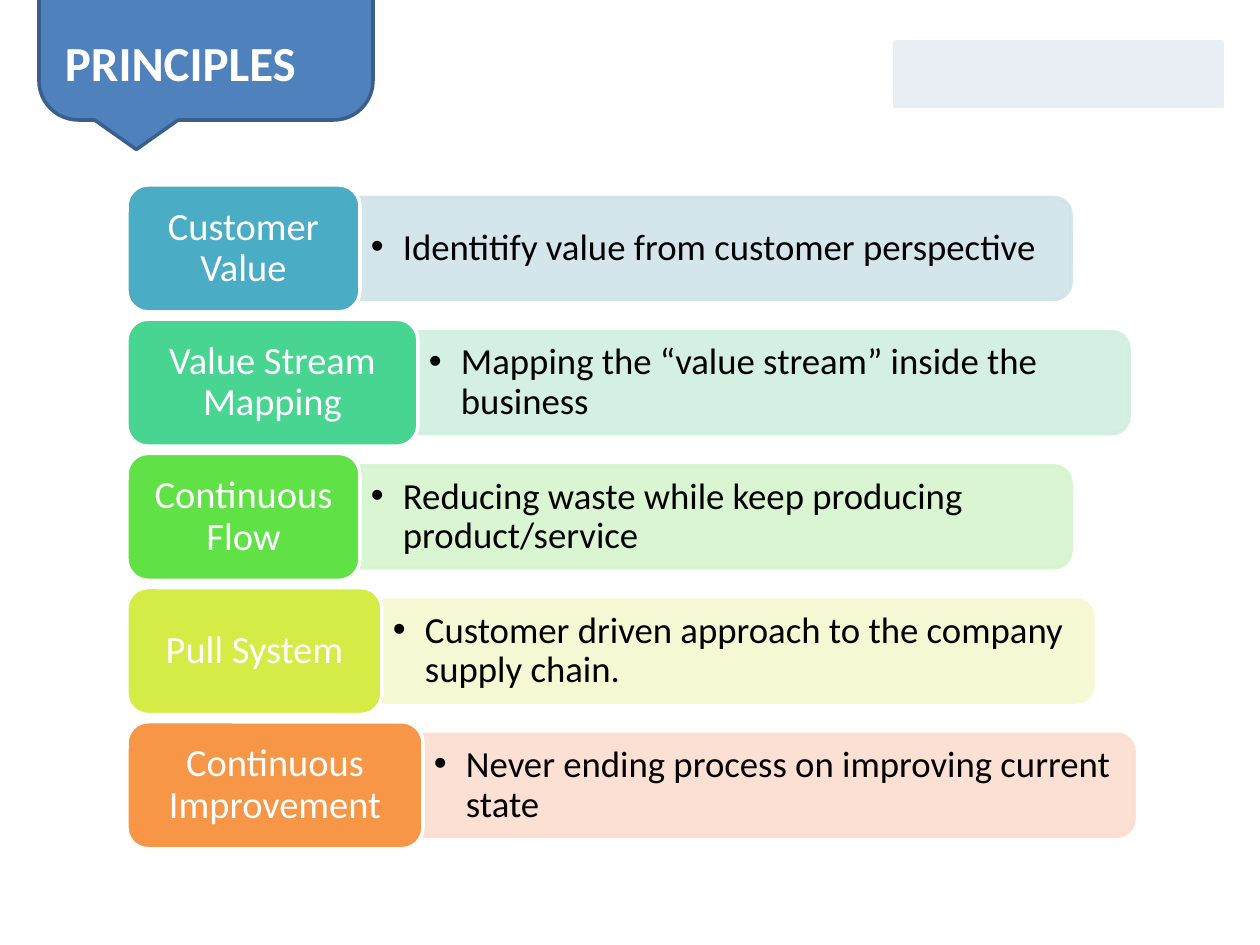
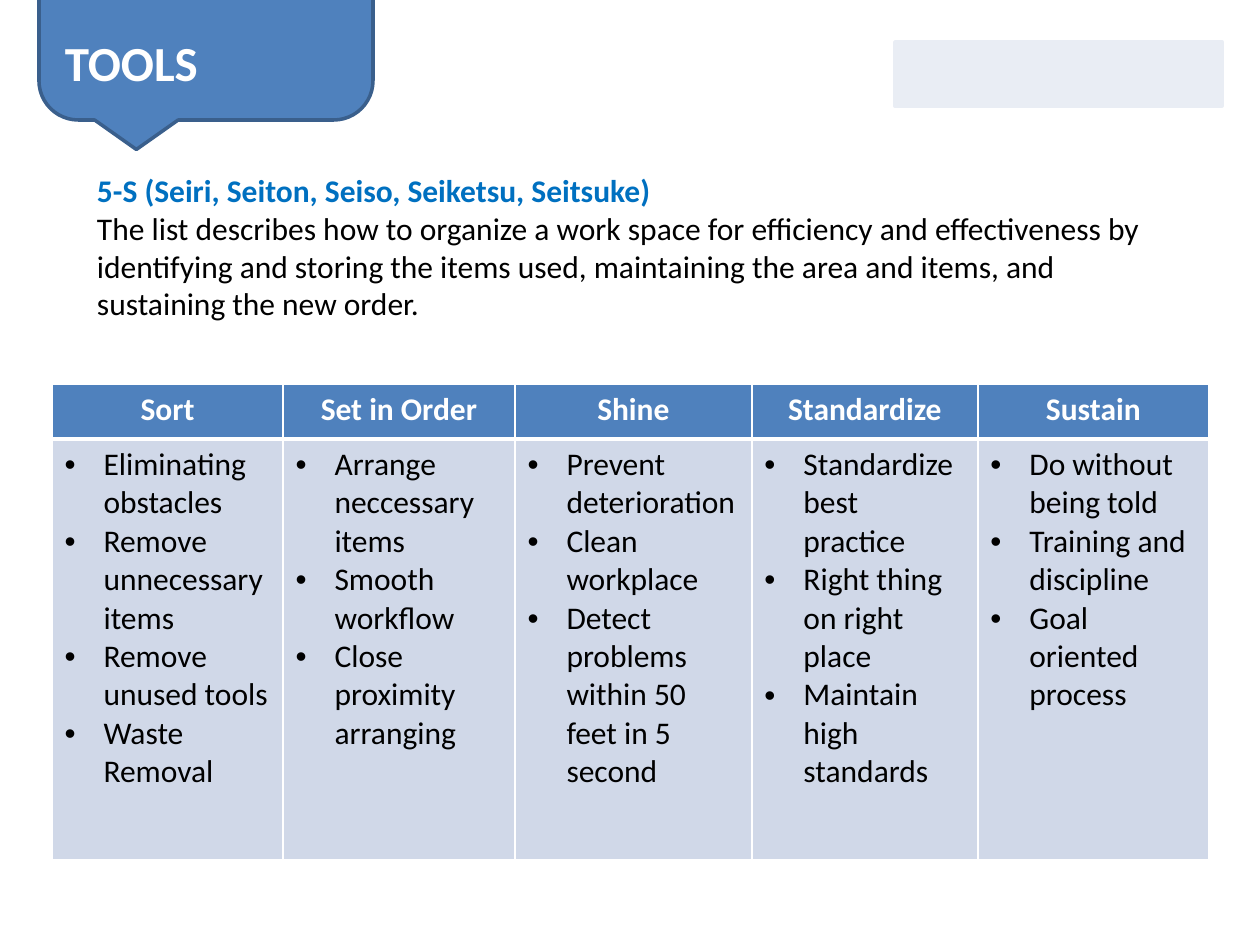
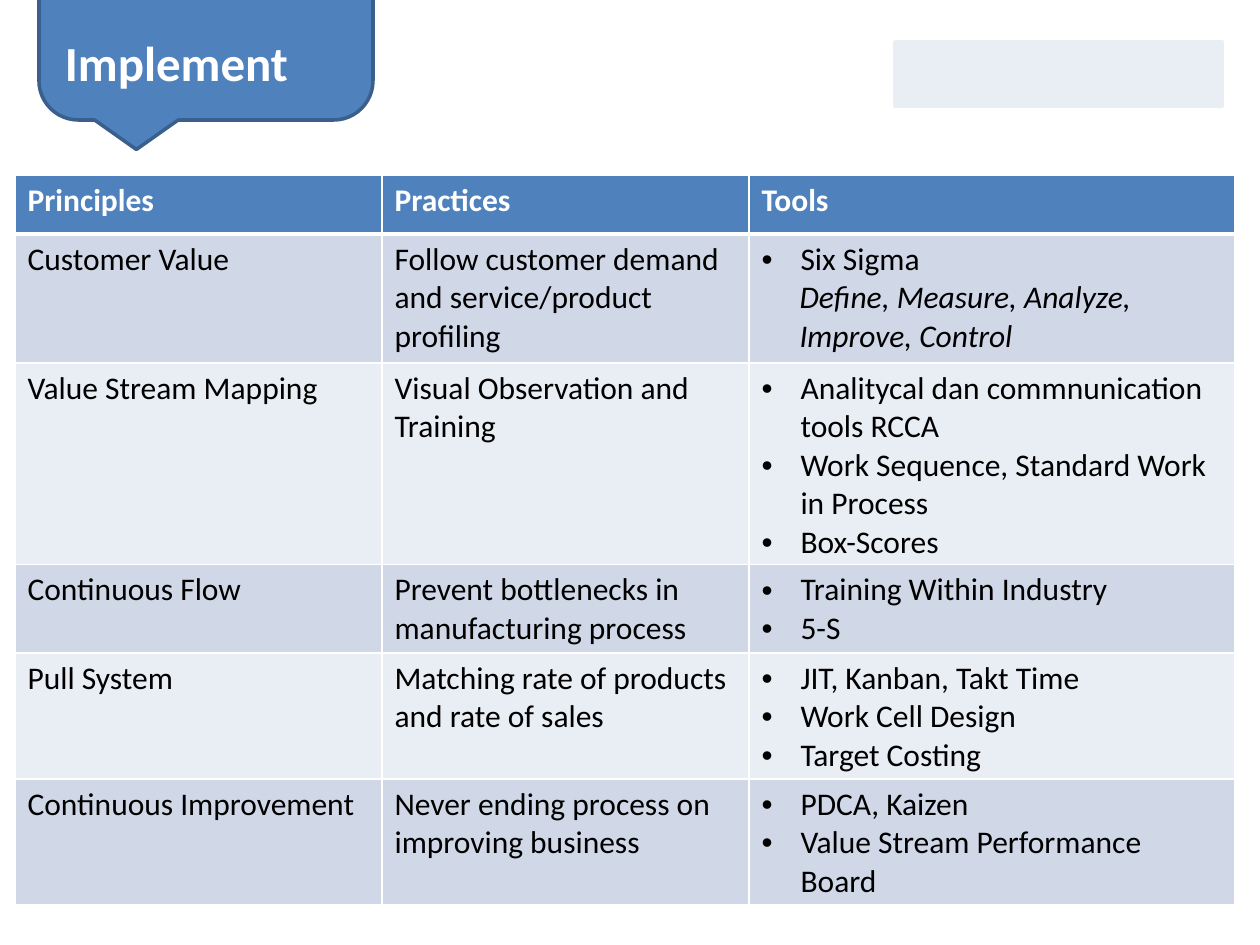
from dataclasses import dataclass

from lxml import etree
from pptx import Presentation
from pptx import util as u
from pptx.dml.color import RGBColor
from pptx.enum import shapes, text
from pptx.oxml.ns import qn

PIXELS_PER_INCH = 126


@dataclass(frozen=True)
class Theme:
    font: str = "Calibri"
    white: str = "FFFFFF"
    black: str = "000000"
    band: str = "4F81BD"
    band_edge: str = "3A5F8C"
    accent: str = "0070C0"
    row_dark: str = "D0D8E8"
    row_light: str = "E9EDF4"
    title_size: int = 28
    label_size: int = 22
    principle_size: int = 21
    body_size: int = 18


THEME = Theme()

# label, description, label width, label colour, bar colour
PRINCIPLES = [
    ("Customer Value", "Identitify value from customer perspective", 233, "4BACC6", "D0E3EA"),
    ("Value Stream Mapping", "Mapping the “value stream” inside the business", 291, "48D491", "CFEFE1"),
    ("Continuous Flow", "Reducing waste while keep producing product/service", 233, "60E146", "D6F4CE"),
    ("Pull System", "Customer driven approach to the company supply chain.", 255, "D5EC46", "F6F8CF"),
    ("Continuous Improvement", "Never ending process on improving current state", 296, "F79646", "FCDDCF"),
]

FIVE_S_HEADING = "5-S (Seiri, Seiton, Seiso, Seiketsu, Seitsuke)"
FIVE_S_SUMMARY = (
    "The list describes how to organize a work space for efficiency and effectiveness by "
    "identifying and storing the items used, maintaining the area and items, and "
    "sustaining the new order."
)
FIVE_S_TABLE = [
    ["Sort", "Set in Order", "Shine", "Standardize", "Sustain"],
    [
        ["Eliminating obstacles", "Remove unnecessary items", "Remove unused tools", "Waste Removal"],
        ["Arrange neccessary items", "Smooth workflow", "Close proximity arranging"],
        ["Prevent deterioration", "Clean workplace", "Detect problems within 50 feet in 5 second"],
        ["Standardize best practice", "Right thing on right place", "Maintain high standards"],
        ["Do without being told", "Training and discipline", "Goal oriented process"],
    ],
]

STEPS_NOTE = {"bullet": False, "indent": 38, "italic": True}
IMPLEMENT_TABLE = [
    ["Principles", "Practices", "Tools"],
    [
        "Customer Value",
        "Follow customer demand and service/product profiling",
        ["Six Sigma", ("Define, Measure, Analyze, Improve, Control", STEPS_NOTE)],
    ],
    [
        "Value Stream Mapping",
        "Visual Observation and Training",
        [
            "Analitycal dan commnunication tools RCCA",
            "Work Sequence, Standard Work in Process",
            "Box-Scores",
        ],
    ],
    [
        "Continuous Flow",
        "Prevent bottlenecks in manufacturing process",
        ["Training Within Industry", "5-S"],
    ],
    [
        "Pull System",
        "Matching rate of products and rate of sales",
        ["JIT, Kanban, Takt Time", "Work Cell Design", "Target Costing"],
    ],
    [
        "Continuous Improvement",
        "Never ending process on improving business",
        ["PDCA, Kaizen", "Value Stream Performance Board"],
    ],
]


def px(length):
    return u.Emu(round(length * 914400 / PIXELS_PER_INCH))


def write(frame, words, size=THEME.body_size, color=THEME.black, bold=False, italic=False,
          align=text.PP_ALIGN.LEFT, bullet=False, indent=0, spacing=None):
    """Add one paragraph, filling the frame's empty first paragraph if there is one."""
    paragraph = frame.paragraphs[0]
    if paragraph.runs:
        paragraph = frame.add_paragraph()
    paragraph.alignment = align
    if spacing:
        paragraph.line_spacing = spacing
    properties = paragraph._p.get_or_add_pPr()
    properties.set("marL", str(px(indent)))
    properties.set("indent", str(px(-indent if bullet else 0)))
    if bullet:
        etree.SubElement(properties, qn("a:buFont"), typeface="Arial")
        etree.SubElement(properties, qn("a:buChar"), char="•")

    run = paragraph.add_run()
    run.text = words
    run.font.name = THEME.font
    run.font.size = u.Pt(size)
    run.font.bold = bold
    run.font.italic = italic
    run.font.color.rgb = RGBColor.from_string(color)


def set_frame(frame, horizontal=13, vertical=6, anchor=text.MSO_ANCHOR.TOP):
    frame.word_wrap = True
    frame.vertical_anchor = anchor
    frame.margin_left = frame.margin_right = px(horizontal)
    frame.margin_top = frame.margin_bottom = px(vertical)
    return frame


def add_text_box(slide, box, **frame_format):
    text_box = slide.shapes.add_textbox(*map(px, box))
    return set_frame(text_box.text_frame, **frame_format)


def add_filled_shape(slide, kind, box, fill, line, opacity=100):
    shape = slide.shapes.add_shape(kind, *map(px, box))
    shape.shadow.inherit = False
    shape.fill.solid()
    shape.fill.fore_color.rgb = RGBColor.from_string(fill)
    shape.line.color.rgb = RGBColor.from_string(line)
    shape.line.width = u.Pt(2)
    if opacity < 100:
        for color in shape._element.spPr.iter(qn("a:srgbClr")):
            etree.SubElement(color, qn("a:alpha"), val=str(opacity * 1000))
    return shape


def add_slide(presentation, title):
    """Add a blank slide with the title callout and a plain corner block."""
    slide = presentation.slides.add_slide(presentation.slide_layouts[6])
    add_filled_shape(slide, shapes.MSO_SHAPE.ROUNDED_RECTANGULAR_CALLOUT,
                     (39, -116, 334, 236), THEME.band, THEME.band_edge)
    add_filled_shape(slide, shapes.MSO_SHAPE.RECTANGLE,
                     (895, 42, 327, 64), THEME.row_light, THEME.row_light)
    write(add_text_box(slide, (52, 26, 307, 72)), title,
          size=THEME.title_size, color=THEME.white, bold=True)
    return slide


def add_principles(slide):
    left, top, pitch, label_height = 127, 185, 134.2, 127
    bar_width, bar_height = 711, 102
    middle = text.MSO_ANCHOR.MIDDLE
    for index, (label, description, label_width, label_color, bar_color) in enumerate(PRINCIPLES):
        row_top = top + index * pitch
        center = row_top + label_height / 2
        bar_left = left + label_width

        # The bar stands upright before its quarter turn about the centre.
        bar = add_filled_shape(
            slide, shapes.MSO_SHAPE.ROUND_2_SAME_RECTANGLE,
            (bar_left + (bar_width - bar_height) / 2, center - bar_width / 2, bar_height, bar_width),
            bar_color, bar_color, opacity=90)
        bar.rotation = 90
        frame = add_text_box(slide, (bar_left, center - 46, bar_width - 5, 92),
                             horizontal=11, vertical=5, anchor=middle)
        write(frame, description, size=THEME.principle_size, bullet=True, indent=32, spacing=0.9)

        block = add_filled_shape(slide, shapes.MSO_SHAPE.ROUNDED_RECTANGLE,
                                 (left, row_top, label_width, label_height), label_color, THEME.white)
        write(set_frame(block.text_frame, horizontal=11, anchor=middle), label,
              size=THEME.label_size, color=THEME.white, align=text.PP_ALIGN.CENTER, spacing=0.9)


def style_cell(cell, fill, **border_points):
    """Set white borders, one point unless given by side (T or B), then the fill."""
    properties = cell._tc.get_or_add_tcPr()
    for side in "LRTB":
        width = u.Pt(border_points.get(side, 1))
        line = etree.SubElement(properties, qn("a:ln" + side), w=str(width))
        solid = etree.SubElement(line, qn("a:solidFill"))
        etree.SubElement(solid, qn("a:srgbClr"), val=THEME.white)
    cell.fill.solid()
    cell.fill.fore_color.rgb = RGBColor.from_string(fill)


def add_table(slide, rows, corner, widths, heights, header_align=text.PP_ALIGN.LEFT):
    box = (*corner, sum(widths), sum(heights))
    table = slide.shapes.add_table(len(rows), len(widths), *map(px, box)).table
    table.horz_banding = False
    for column, width in zip(table.columns, widths):
        column.width = px(width)
    for row, height in zip(table.rows, heights):
        row.height = px(height)

    for row_index, row in enumerate(rows):
        for column_index, content in enumerate(row):
            cell = table.cell(row_index, column_index)
            frame = cell.text_frame
            if row_index == 0:
                style_cell(cell, THEME.band, B=3)
                write(frame, content, color=THEME.white, bold=True, align=header_align)
                continue
            style_cell(cell, THEME.row_dark if row_index % 2 else THEME.row_light,
                       T=3 if row_index == 1 else 1)
            if isinstance(content, str):
                write(frame, content)
                continue
            for item in content:
                words, overrides = (item, {}) if isinstance(item, str) else item
                write(frame, words, **{"bullet": True, "indent": 39, **overrides})


def main():
    presentation = Presentation()
    presentation.slide_width, presentation.slide_height = px(1260), px(945)

    add_principles(add_slide(presentation, "PRINCIPLES"))

    tools = add_slide(presentation, "TOOLS")
    introduction = add_text_box(tools, (84, 165, 1091, 165))
    write(introduction, FIVE_S_HEADING, color=THEME.accent, bold=True)
    write(introduction, FIVE_S_SUMMARY)
    add_table(tools, FIVE_S_TABLE, (52, 384), (231, 232, 237, 226, 231), (55, 421),
              header_align=text.PP_ALIGN.CENTER)

    implement = add_slide(presentation, "Implement")
    add_table(implement, IMPLEMENT_TABLE, (15, 175), (367, 367, 486),
              (59, 129, 201, 88, 126, 126))

    presentation.save("out.pptx")


if __name__ == "__main__":
    main()
